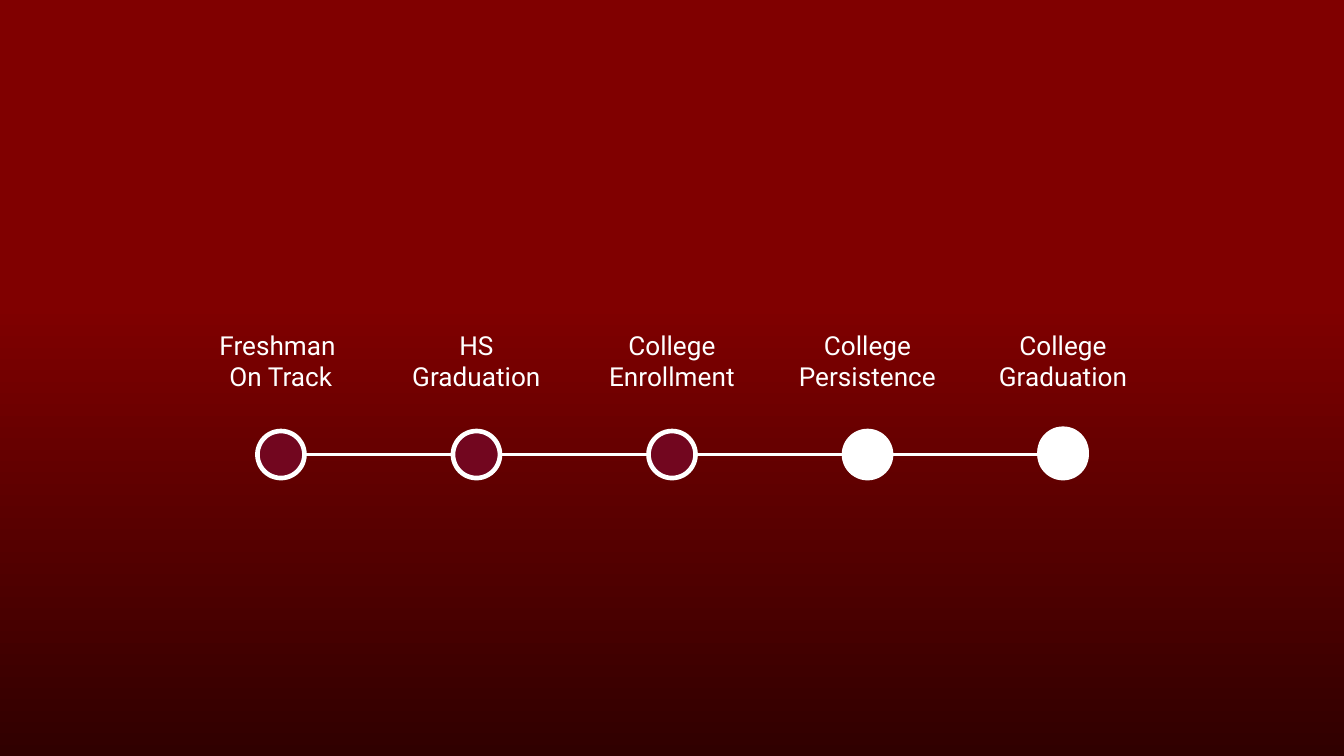
from lxml.etree import SubElement
from pptx import Presentation
from pptx.dml.color import RGBColor as RGB
from pptx.enum.shapes import MSO_CONNECTOR as LINE, MSO_SHAPE as SHAPE
from pptx.enum.text import MSO_ANCHOR as ANCHOR, PP_ALIGN as ALIGN
from pptx.oxml.ns import qn
from pptx.util import Pt

HUES = {
    "back": "171716",
    "top": "800000",
    "base": "300000",
    "dot": "72061F",
    "white": "FFFFFF",
}
RGBS = {name: RGB.from_string(hue) for name, hue in HUES.items()}
WIDE, HIGH = 720, 405
STEP = 104.75                       # gap between milestone centres
FIRST = WIDE / 2 - 2 * STEP
MID = 243.5                         # height of the timeline
SIZE = 25.2

# label, dot fill
STAGES = [
    ("Freshman \vOn Track", "dot"),
    ("HS Graduation", "dot"),
    ("College Enrollment", "dot"),
    ("College Persistence", "white"),
    ("College Graduation", "dot"),
]

deck = Presentation()
deck.slide_width, deck.slide_height = Pt(WIDE), Pt(HIGH)
slide = deck.slides.add_slide(deck.slide_layouts[6])
slide.background.fill.solid()
slide.background.fill.fore_color.rgb = RGBS["back"]
shapes = slide.shapes

# Backdrop
panel = shapes.add_shape(SHAPE.RECTANGLE, 0, 0, Pt(WIDE), Pt(HIGH))
panel.shadow.inherit = False
panel.line.fill.background()
panel.fill.gradient()
panel.fill.gradient_angle = 270
for stop, (place, hue) in zip(panel.fill.gradient_stops, [(0.4, "top"), (1, "base")]):
    stop.position = place
    stop.color.rgb = RGBS[hue]

# Timeline
track = shapes.add_connector(
    LINE.STRAIGHT, Pt(FIRST + 6), Pt(MID), Pt(WIDE - FIRST - 6), Pt(MID))
track.line.color.rgb = RGBS["white"]
track.line.width = Pt(2)
SubElement(track._element.spPr, qn("a:effectLst"))


def add_dot(x, y, hue):
    dot = shapes.add_shape(
        SHAPE.OVAL, Pt(x - SIZE / 2), Pt(y - SIZE / 2), Pt(SIZE), Pt(SIZE))
    dot.shadow.inherit = False
    dot.fill.solid()
    dot.fill.fore_color.rgb = RGBS[hue]
    dot.line.color.rgb = RGBS["white"]
    dot.line.width = Pt(2.5)


# Milestones
for i, (label, hue) in enumerate(STAGES):
    x = FIRST + i * STEP
    box = shapes.add_textbox(Pt(x - 51), Pt(172.8), Pt(102), Pt(41))
    frame = box.text_frame
    frame.word_wrap = True
    frame.vertical_anchor = ANCHOR.MIDDLE
    para = frame.paragraphs[0]
    para.text = label
    para.alignment = ALIGN.CENTER
    para.font.name = "Roboto"
    para.font.size = Pt(14)
    para.font.color.rgb = RGBS["white"]
    add_dot(x, MID, hue)

# The goal sits a little above the last dot
add_dot(x, MID - 1.2, "white")

deck.save("out.pptx")
